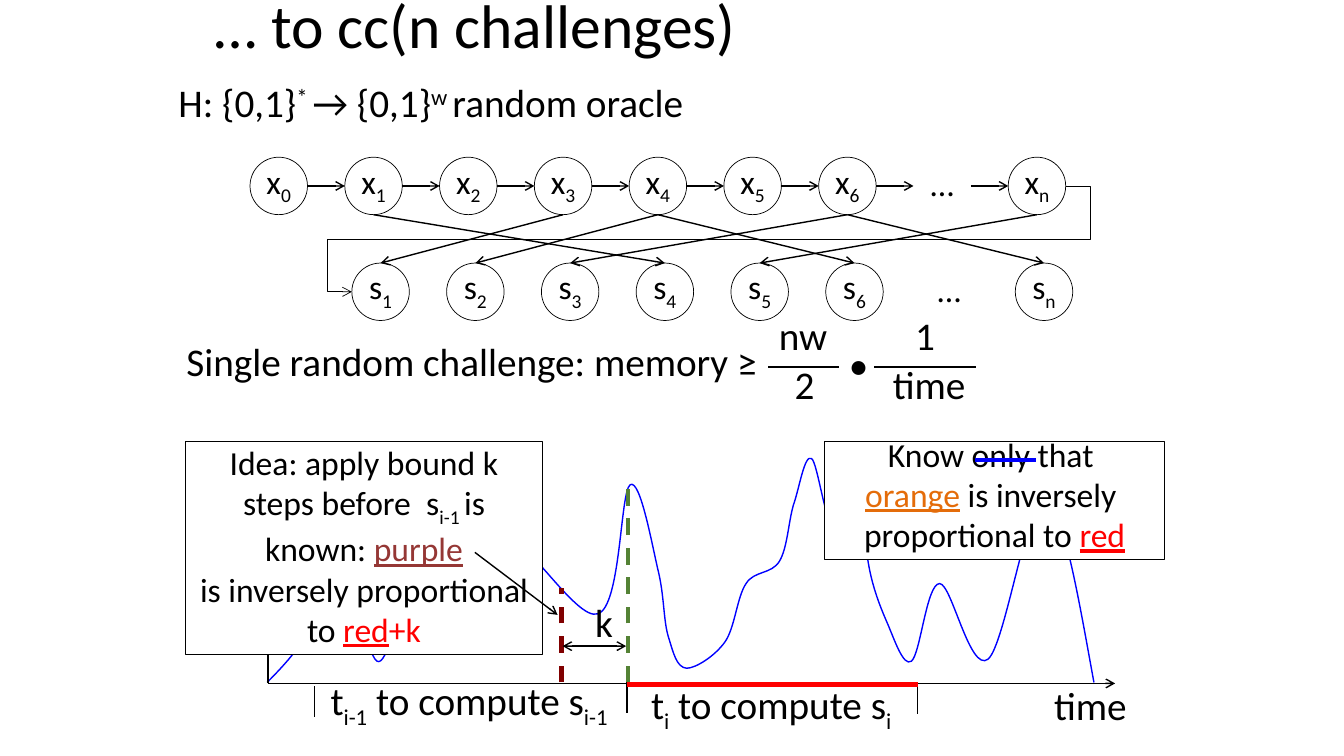
"""Slide: from a single random challenge to the cumulative complexity of n challenges."""
from lxml import etree
from pptx import Presentation, util as u
from pptx.dml.color import RGBColor
from pptx.enum import dml, shapes, text
from pptx.oxml.ns import qn

BLACK = RGBColor(0, 0, 0)
WHITE = RGBColor(255, 255, 255)
BLUE = RGBColor(0, 0, 255)
RED = RGBColor(255, 0, 0)
ORANGE = RGBColor(0xE4, 0x6C, 0x0A)
PURPLE = RGBColor(0x95, 0x37, 0x35)
MAROON = RGBColor(0x80, 0, 0)
GREEN = RGBColor(0x54, 0x82, 0x35)
CENTER, LEFT = text.PP_ALIGN.CENTER, text.PP_ALIGN.LEFT
SUB, SUPER = {"base": -25}, {"base": 30}

deck = Presentation()
deck.slide_width, deck.slide_height = u.Inches(13.33), u.Inches(7.5)
slide = deck.slides.add_slide(deck.slide_layouts[1])
canvas = slide.shapes


def write(holder, *runs, size=28, align=LEFT, spacing=None, anchor=text.MSO_ANCHOR.TOP,
          wrap=True, grow=False, bullet=True):
    """Fill a shape with runs, each a string or a (string, format) pair."""
    frame = holder.text_frame
    frame.auto_size = text.MSO_AUTO_SIZE.SHAPE_TO_FIT_TEXT if grow else text.MSO_AUTO_SIZE.NONE
    frame.word_wrap, frame.vertical_anchor = wrap, anchor
    para = frame.paragraphs[0]
    if not bullet:
        props = para._p.get_or_add_pPr()
        props.set("marL", "0")
        props.set("indent", "0")
        etree.SubElement(props, qn("a:buNone"))
    para.alignment, para.space_before = align, u.Pt(0)
    if spacing:
        para.line_spacing = spacing
    for item in runs:
        words, style = (item, {}) if isinstance(item, str) else item
        for row, piece in enumerate(words.split("\n")):
            if row:
                para.add_line_break()
            if not piece:
                continue
            run = para.add_run()
            run.text = piece
            run.font.name, run.font.size = "Calibri", u.Pt(size)
            run.font.color.rgb = style.get("color", BLACK)
            run.font.underline = style.get("underline", False)
            if "base" in style:
                run._r.get_or_add_rPr().set("baseline", str(style["base"] * 1000))


def connect(x1, y1, x2, y2, color=BLACK, width=1, ends=(), dash=False,
            kind=shapes.MSO_CONNECTOR.STRAIGHT):
    """Draw a line; ends lists which of head and tail carry an arrow."""
    link = canvas.add_connector(kind, *map(u.Inches, (x1, y1, x2, y2)))
    link.line.color.rgb, link.line.width = color, u.Pt(width)
    if dash:
        link.line.dash_style = dml.MSO_LINE.DASH
    outline = link._element.spPr.find(qn("a:ln"))
    for end in ends:
        etree.SubElement(outline, qn(f"a:{end}End"), type="arrow")
    etree.SubElement(link._element.spPr, qn("a:effectLst"))
    return link


TAIL = ("tail",)

memory_points = [
    (277, 665), (288, 653), (295, 643), (303, 632), (302, 621), (308, 615),
    (315, 609), (330, 614), (336, 605), (342, 596), (338, 552), (345, 560),
    (351, 569), (363, 649), (374, 656), (384, 662), (394, 603), (406, 598),
    (417, 594), (429, 639), (443, 627), (457, 615), (466, 528), (491, 525),
    (516, 522), (571, 617), (593, 609), (616, 602), (615, 488), (625, 481),
    (635, 474), (647, 542), (653, 567), (659, 592), (658, 616), (663, 632),
    (668, 648), (671, 662), (681, 663), (690, 663), (709, 651), (719, 637),
    (729, 623), (731, 592), (740, 579), (748, 566), (765, 570), (773, 557),
    (781, 544), (782, 518), (787, 501), (793, 484), (798, 450), (805, 455),
    (811, 459), (819, 523), (828, 525), (836, 528), (850, 467), (855, 472),
    (861, 477), (857, 533), (861, 557), (865, 582), (873, 602), (880, 618),
    (887, 634), (896, 662), (904, 656), (913, 649), (919, 579), (932, 579),
    (944, 579), (962, 668), (980, 654), (997, 640), (1019, 493), (1036, 496),
    (1054, 500), (1069, 589), (1085, 677)]
builder = canvas.build_freeform(265, 677, scale=u.Inches(0.01))
builder.add_line_segments(memory_points, close=False)
memory_curve = builder.convert_to_shape()
memory_curve.shadow.inherit = False
memory_curve.fill.background()
memory_curve.line.color.rgb, memory_curve.line.width = BLUE, u.Pt(1)
segments = list(memory_curve._element.iter(qn("a:lnTo")))
for first in range(0, len(segments), 3):
    segments[first].tag = qn("a:cubicBezTo")
    for follower in segments[first + 1:first + 3]:
        segments[first].append(follower[0])
        follower.getparent().remove(follower)

heading, oracle = slide.placeholders[0], slide.placeholders[1]
for holder, area in ((heading, (2.03, -0.34, 9.5, 1.25)), (oracle, (1.67, 0.78, 6.68, 0.72))):
    holder.left, holder.top, holder.width, holder.height = map(u.Inches, area)
write(heading, "… to cc(n challenges)", size=44, spacing=0.9, anchor=text.MSO_ANCHOR.MIDDLE)
write(oracle, "H: {0,1}", ("* ", SUPER), "→ {0,1}", ("w ", SUPER), "random oracle",
      spacing=0.9, bullet=False)

PITCH, NODE = 0.94, 0.57
X_LEFT, X_TOP, S_LEFT, S_TOP = 2.48, 1.56, 3.49, 2.61
X_MID, S_MID = X_TOP + NODE / 2, S_TOP + NODE / 2
rows = (("x", X_LEFT, X_TOP, ["0", "1", "2", "3", "4", "5", "6", None, "n"]),
        ("s", S_LEFT, S_TOP, ["1", "2", "3", "4", "5", "6", None, "n"]))
for letter, left, top, indices in rows:
    for column, index in enumerate(indices):
        node = canvas.add_shape(shapes.MSO_SHAPE.OVAL, u.Inches(left + column * PITCH),
                                u.Inches(top), u.Inches(NODE), u.Inches(NODE))
        node.shadow.inherit = False
        node.fill.background()
        if index:
            node.line.color.rgb, node.line.width = BLACK, u.Pt(0.5)
        else:
            node.line.fill.background()
        node.text_frame.margin_top, node.text_frame.margin_bottom = 0, u.Inches(0.05)
        write(node, *([letter, (index, SUB)] if index else ["…"]), size=24, align=CENTER,
              anchor=text.MSO_ANCHOR.MIDDLE, wrap=False)

for column in range(8):
    start = X_LEFT + column * PITCH + NODE
    connect(start, X_MID, start + PITCH - NODE, X_MID, ends=TAIL)
for source, target in ((3, 0), (4, 1), (6, 2), (1, 3), (8, 4), (4, 5), (6, 7)):
    connect(X_LEFT + source * PITCH + NODE / 2, X_TOP + NODE,
            S_LEFT + target * PITCH + NODE / 2, S_TOP, ends=TAIL)

feedback = connect(X_LEFT + 8 * PITCH + NODE, X_MID, S_LEFT, S_MID, width=0.5, ends=TAIL,
                   kind=shapes.MSO_CONNECTOR.ELBOW)
bend = feedback._element.spPr.find(qn("a:prstGeom"))
bend.set("prst", "bentConnector5")
guides = bend.find(qn("a:avLst"))
for number, share in enumerate((-3500, 50000, 103500), 1):
    etree.SubElement(guides, qn("a:gd"), name=f"adj{number}", fmla=f"val {share}")

AXIS = 6.78
connect(2.66, AXIS, 11.06, AXIS, ends=TAIL)
connect(2.66, AXIS, 2.66, 4.38, ends=TAIL)
for tick, top in ((3.12, 6.81), (6.22, 6.77), (9.1, 6.78)):
    connect(tick, top + 0.3, tick, top)
connect(6.23, 6.77, 6.23, 4.79, color=GREEN, width=3, dash=True)
connect(6.22, 6.79, 9.1, 6.79, color=RED, width=3)

notes = (
    ((8.18, 4.38, 3.37, 1.17),
     ["Know only that \n", ("orange", {"color": ORANGE, "underline": True}),
      " is inversely \nproportional to ", ("red", {"color": RED, "underline": True})]),
    ((1.84, 4.38, 3.54, 2.11),
     ["Idea: apply bound k steps before  s", ("i-1 ", SUB), "is known: ",
      ("purple\n", {"color": PURPLE, "underline": True}), "is inversely proportional to ",
      ("red", {"color": RED, "underline": True}), ("+k", {"color": RED})]))
for area, runs in notes:
    note = canvas.add_shape(shapes.MSO_SHAPE.RECTANGLE, *map(u.Inches, area))
    note.shadow.inherit = False
    note.fill.solid()
    note.fill.fore_color.rgb = WHITE
    note.line.color.rgb, note.line.width = BLACK, u.Pt(0.5)
    write(note, *runs, size=24, align=CENTER, anchor=text.MSO_ANCHOR.BOTTOM)

captions = (
    ((1.75, 3.3, 6.68, 0.72), ["Single random challenge: memory ≥"], {}),
    ((6.36, 6.75, 2.7, 0.59), ["t", ("i", SUB), " to compute s", ("i", SUB)], {"spacing": 0.8}),
    ((3.18, 6.71, 3.23, 0.59), ["t", ("i-1", SUB), " to compute s", ("i-1", SUB)],
     {"spacing": 0.8}))
labels = (("time", 10.35, 6.71, 0.93), ("nw", 7.62, 3.04, 0.69), ("2", 7.78, 3.53, 0.4),
          ("1", 8.97, 3.04, 0.41), ("time", 8.75, 3.53, 0.93), ("• ", 8.28, 3.33, 0.47),
          ("k", 5.8, 5.89, 0.38))
captions += tuple(((left, top, width, 0.57), [word],
                   {"align": CENTER, "wrap": False, "grow": True})
                  for word, left, top, width in labels)
for area, runs, style in captions:
    write(canvas.add_textbox(*map(u.Inches, area)), *runs, **style)

for left, right in ((7.62, 8.32), (8.67, 9.68)):
    connect(left, 3.64, right, 3.64, width=1.5)
connect(5.57, 6.77, 5.57, 5.83, color=MAROON, width=3, dash=True)
connect(4.71, 5.48, 5.53, 6.1, ends=TAIL)
connect(5.58, 6.41, 6.21, 6.41, ends=("head", "tail"))
connect(9.67, 4.56, 10.28, 4.56, color=BLUE, width=3)

deck.save("out.pptx")
